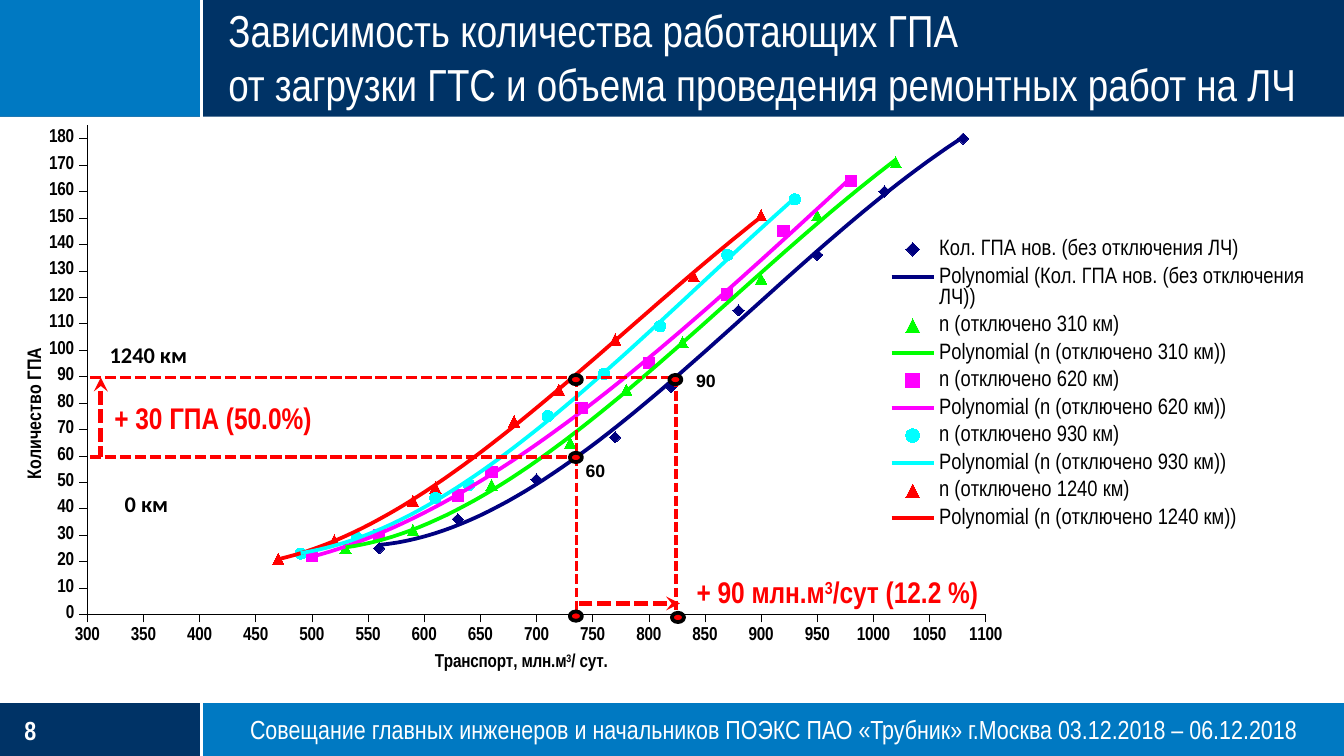
from dataclasses import dataclass

from lxml import etree
from pptx import Presentation
from pptx.chart.data import XyChartData
from pptx.dml.color import RGBColor
from pptx.enum.chart import XL_CHART_TYPE, XL_LEGEND_POSITION, XL_MARKER_STYLE, XL_TICK_MARK
from pptx.enum.dml import MSO_LINE
from pptx.enum.shapes import MSO_CONNECTOR, MSO_SHAPE
from pptx.enum.text import MSO_ANCHOR, MSO_AUTO_SIZE, PP_ALIGN
from pptx.oxml.ns import nsdecls, qn
from pptx.oxml import parse_xml
from pptx.util import Pt

LEFT, CENTER = PP_ALIGN.LEFT, PP_ALIGN.CENTER
TOP, MIDDLE = MSO_ANCHOR.TOP, MSO_ANCHOR.MIDDLE
RECTANGLE, OVAL = MSO_SHAPE.RECTANGLE, MSO_SHAPE.OVAL
DASH = MSO_LINE.SQUARE_DOT
DIAMOND, TRIANGLE = XL_MARKER_STYLE.DIAMOND, XL_MARKER_STYLE.TRIANGLE
SQUARE, CIRCLE = XL_MARKER_STYLE.SQUARE, XL_MARKER_STYLE.CIRCLE
NARROW = "Arial Narrow"
COLORS = {
    "white": "FFFFFF", "black": "000000", "blue": "0079C2", "dark": "003366",
    "navy": "000080", "green": "00FF00", "magenta": "FF00FF", "cyan": "00FFFF", "red": "FF0000",
}


@dataclass
class Curve:
    name: str
    color: str
    marker: XL_MARKER_STYLE
    transport: list[int]
    units: list[int]


@dataclass
class Label:
    text: str  # a part between ^ marks is superscript
    place: tuple[float, float, float, float]
    size: float
    font: str = NARROW
    color: str = "red"
    bold: bool = True
    align: PP_ALIGN = CENTER
    inset: tuple[float, float] = (2.9, 2.9)
    anchor: MSO_ANCHOR = TOP
    fill: str = ""
    wrap: bool = True


@dataclass
class Line:
    start: tuple[float, float]
    end: tuple[float, float]
    width: float
    color: str = "red"
    dashed: bool = True
    arrow: bool = False


CURVES = [
    Curve("Кол. ГПА нов. (без отключения ЛЧ)", "navy", DIAMOND,
          [560, 630, 700, 770, 820, 880, 950, 1010, 1080], [25, 36, 51, 67, 86, 115, 136, 160, 180]),
    Curve("n (отключено 310 км)", "green", TRIANGLE,
          [530, 590, 660, 730, 780, 830, 900, 950, 1020], [25, 32, 49, 65, 85, 103, 127, 151, 171]),
    Curve("n (отключено 620 км)", "magenta", SQUARE,
          [500, 560, 630, 660, 740, 800, 870, 920, 980], [22, 30, 45, 54, 78, 95, 121, 145, 164]),
    Curve("n (отключено 930 км)", "cyan", CIRCLE,
          [490, 540, 610, 640, 710, 760, 810, 870, 930], [23, 29, 44, 49, 75, 91, 109, 136, 157]),
    Curve("n (отключено 1240 км)", "red", TRIANGLE,
          [470, 520, 590, 610, 680, 720, 770, 840, 900], [21, 28, 43, 48, 73, 85, 104, 128, 151]),
]
BARS = [
    ((0, 376.6, 720, 28.4), "blue"), ((0, 0, 720, 62.6), "dark"),
    ((0, 0, 108.7, 62.6), "blue"), ((0, 376.6, 108.7, 28.4), "dark"),
]
DIVIDERS = [
    Line(start, end, 1.25, "white", dashed=False)
    for start, end in [((0, 375.8), (720, 375.8)), ((108, 375.8), (108, 405)),
                       ((108, 0), (108, 63.4)), ((0, 63.4), (720, 63.4))]
]
GUIDES = [
    Line((308.9, 202.3), (308.9, 331.2), 1.75),
    Line((362.2, 202.3), (362.2, 331.2), 1.75),
    Line((48.2, 244.8), (308.9, 244.8), 2),
    Line((48.2, 202.3), (364.3, 202.3), 2),
    Line((54, 202.3), (54, 244.8), 2.5, arrow=True),
    Line((364.3, 323.3), (308.9, 323.3), 2.5, arrow=True),
]
DOT_CENTERS = [(308.5, 245.1), (308.5, 330.1), (363.2, 330.8), (308.5, 203.4), (361.8, 203.4)]
LABELS = [
    Label("+ 30 ГПА (50.0%)", (51.1, 211, 126, 25.2), 16),
    Label("1240 км", (51.8, 180, 55.4, 20.2), 12, "Calibri", "black", fill="white"),
    Label("+ 90 млн.м^3^/сут (12.2 %)", (359.3, 304.6, 178.6, 25.2), 16),
    Label("0 км", (51.1, 259.9, 54.7, 20.2), 12, "Calibri", "black", fill="white"),
    Label("60", (306.7, 242.6, 21.6, 13.7), 9.5, "Arial", "black", align=LEFT, inset=(7.2, 3.6), wrap=False),
    Label("90", (365.8, 194.4, 25.2, 13.7), 9.5, "Arial", "black", align=LEFT, inset=(7.2, 3.6), wrap=False),
    Label("8", (13, 382.3, 72.7, 17.3), 14, color="white", align=LEFT, inset=(0, 0), anchor=MIDDLE),
    Label("Совещание главных инженеров и начальников ПОЭКС ПАО «Трубник» г.Москва 03.12.2018 – 06.12.2018",
          (109.4, 378.7, 610.6, 24.5), 14, color="white", bold=False, inset=(7.2, 3.6)),
]
TITLE = Label("Зависимость количества работающих ГПА\n"
              "от загрузки ГТС и объема проведения ремонтных работ на ЛЧ",
              (115.2, -2.2, 596.2, 65.5), 24, color="white", bold=False, align=LEFT, inset=(7.2, 3.6))


def rgb(name: str) -> RGBColor:
    return RGBColor.from_string(COLORS[name])


def set_font(font, size: float, name: str, color: str, bold: bool) -> None:
    font.size, font.name, font.bold = Pt(size), name, bold
    font.color.rgb = rgb(color)


def fill_paragraph(para, text: str) -> None:
    """Add the text as runs, raising every part between ^ marks."""
    for index, part in enumerate(text.split("^")):
        span = para.add_run()
        span.text = part
        if index % 2:
            span._r.get_or_add_rPr().set("baseline", "30000")


def write_label(box, label: Label) -> None:
    box.left, box.top, box.width, box.height = map(Pt, label.place)
    frame = box.text_frame
    frame.auto_size = MSO_AUTO_SIZE.NONE
    frame.word_wrap, frame.vertical_anchor = label.wrap, label.anchor
    frame.margin_left = frame.margin_right = Pt(label.inset[0])
    frame.margin_top = frame.margin_bottom = Pt(label.inset[1])
    if label.fill:
        box.fill.solid()
        box.fill.fore_color.rgb = rgb(label.fill)
    for index, text in enumerate(label.text.split("\n")):
        para = frame.add_paragraph() if index else frame.paragraphs[0]
        para.alignment = label.align
        fill_paragraph(para, text)
        set_font(para.font, label.size, label.font, label.color, label.bold)


def add_filled(page, kind: MSO_SHAPE, place: tuple, color: str, outline: str = "") -> None:
    shape = page.shapes.add_shape(kind, *map(Pt, place))
    shape.shadow.inherit = False
    shape.fill.solid()
    shape.fill.fore_color.rgb = rgb(color)
    if outline:
        shape.line.color.rgb, shape.line.width = rgb(outline), Pt(2)
    else:
        shape.line.fill.background()


def add_line(page, line: Line) -> None:
    connector = page.shapes.add_connector(MSO_CONNECTOR.STRAIGHT, *map(Pt, line.start + line.end))
    connector.line.color.rgb, connector.line.width = rgb(line.color), Pt(line.width)
    if line.dashed:
        connector.line.dash_style = DASH
    properties = connector.element.spPr
    if line.arrow:
        etree.SubElement(properties.find(qn("a:ln")), qn("a:headEnd"), type="stealth")
    etree.SubElement(properties, qn("a:effectLst"))


def set_layout(parent, position: int, inner: bool = False, **fractions: float) -> None:
    """Place a chart part by fractions of the chart size."""
    for old in parent.findall(qn("c:layout")):
        parent.remove(old)
    target = '<c:layoutTarget val="inner"/>' if inner else ""
    modes = "".join(f'<c:{key}Mode val="edge"/>' for key in "xy")
    values = "".join(f'<c:{key} val="{value}"/>' for key, value in fractions.items())
    parent.insert(position, parse_xml(
        f'<c:layout {nsdecls("c")}><c:manualLayout>{target}{modes}{values}</c:manualLayout></c:layout>'))


def format_axis(axis, title: str, size: float, limits: tuple, x: float, y: float) -> None:
    axis.minimum_scale, axis.maximum_scale, axis.major_unit = limits
    axis.has_major_gridlines = False
    axis.major_tick_mark = XL_TICK_MARK.OUTSIDE
    axis.format.line.color.rgb, axis.format.line.width = rgb("black"), Pt(0.25)
    set_font(axis.tick_labels.font, 10, NARROW, "black", True)
    para = axis.axis_title.text_frame.paragraphs[0]
    fill_paragraph(para, title)
    set_font(para.font, size, NARROW, "black", True)
    set_layout(axis.axis_title.element, 1, x=x, y=y)


def add_load_chart(page) -> None:
    data = XyChartData()
    for curve in CURVES:
        series = data.add_series(curve.name)
        for x, y in zip(curve.transport, curve.units):
            series.add_data_point(x, y)
    place = map(Pt, (4.3, 61.2, 707.8, 302.4))
    chart = page.shapes.add_chart(XL_CHART_TYPE.XY_SCATTER, *place, data).chart
    chart.has_title = False
    set_font(chart.font, 9.5, "Arial", "black", False)
    chart.plots[0].vary_by_categories = False
    for curve, series, element in zip(CURVES, chart.plots[0].series, chart.element.iter(qn("c:ser"))):
        series.format.line.fill.background()
        series.marker.style, series.marker.size = curve.marker, 6
        series.marker.format.fill.solid()
        series.marker.format.fill.fore_color.rgb = rgb(curve.color)
        series.marker.format.line.color.rgb = rgb(curve.color)
        element.find(qn("c:xVal")).addprevious(parse_xml(
            f'<c:trendline {nsdecls("c", "a")}><c:spPr><a:ln w="25400"><a:solidFill>'
            f'<a:srgbClr val="{COLORS[curve.color]}"/></a:solidFill></a:ln></c:spPr>'
            '<c:trendlineType val="poly"/><c:order val="3"/>'
            '<c:dispRSqr val="0"/><c:dispEq val="0"/></c:trendline>'))
        series.smooth = False
    format_axis(chart.category_axis, "Транспорт, млн.м^3^/ сут.", 10, (300, 1100, 50), 0.32, 0.95)
    format_axis(chart.value_axis, "Количество ГПА", 10.5, (0, 185, 10), 0.01, 0.41)
    next(chart.value_axis.axis_title.element.iter(qn("a:bodyPr"))).set("rot", "-5400000")
    set_layout(next(chart.element.iter(qn("c:plotArea"))), 0, True, x=0.06, y=0.02, w=0.68, h=0.87)
    chart.has_legend = True
    chart.legend.position = XL_LEGEND_POSITION.RIGHT
    chart.legend.include_in_layout = False
    set_font(chart.legend.font, 12, NARROW, "black", False)
    set_layout(next(chart.element.iter(qn("c:legend"))), 1, x=0.66, y=0.21, w=0.33, h=0.54)


def main() -> None:
    deck = Presentation()
    deck.slide_width, deck.slide_height = Pt(720), Pt(405)
    page = deck.slides.add_slide(deck.slide_layouts[5])
    for place, color in BARS:
        add_filled(page, RECTANGLE, place, color)
    for line in DIVIDERS:
        add_line(page, line)
    add_load_chart(page)
    title = page.shapes.title
    write_label(title, TITLE)
    page.shapes.element.append(title.element)  # brings the title in front of the header bar
    for line in GUIDES:
        add_line(page, line)
    for label in LABELS:
        write_label(page.shapes.add_textbox(0, 0, 0, 0), label)
    for x, y in DOT_CENTERS:
        add_filled(page, OVAL, (x - 3.25, y - 2.5, 6.5, 5), "red", "black")
    deck.save("out.pptx")


if __name__ == "__main__":
    main()
